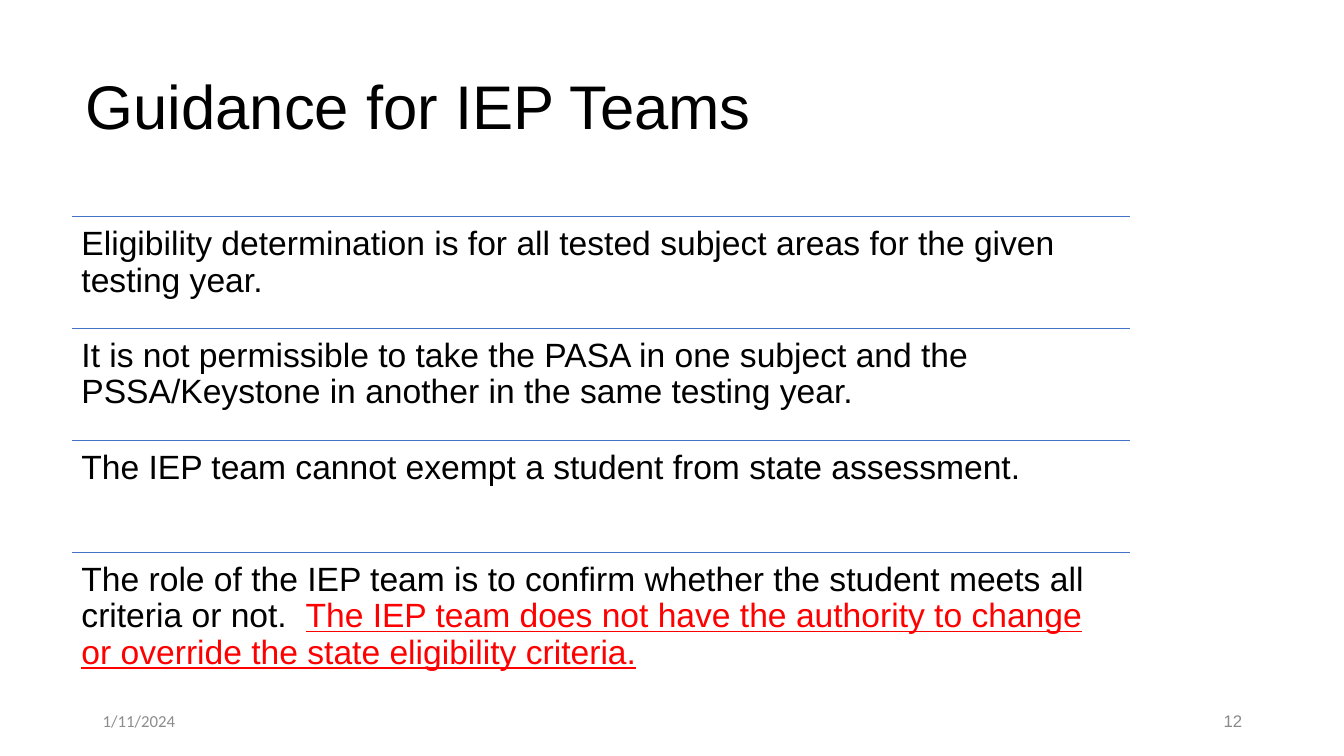
from dataclasses import dataclass

from lxml import etree
from pptx import Presentation
from pptx.dml.color import RGBColor
from pptx.enum.shapes import MSO_CONNECTOR
from pptx.enum.text import MSO_ANCHOR, PP_ALIGN
from pptx.oxml.ns import qn
from pptx.util import Inches, Pt

STRAIGHT = MSO_CONNECTOR.STRAIGHT
TOP, MIDDLE, BOTTOM = MSO_ANCHOR.TOP, MSO_ANCHOR.MIDDLE, MSO_ANCHOR.BOTTOM
LEFT, RIGHT = PP_ALIGN.LEFT, PP_ALIGN.RIGHT


@dataclass(frozen=True)
class Theme:
    """Colours, fonts and type sizes of the slide."""
    ink: str = "000000"
    alert: str = "FF0000"
    rule: str = "4472C4"
    date: str = "8C8C8C"
    page: str = "898989"
    face: str = "Arial"
    alt: str = "Calibri"
    title: int = 44
    body: int = 24
    foot: int = 12


THEME = Theme()

POINTS = [
    ("Eligibility determination is for all tested subject areas "
     "for the given testing year.", ""),
    ("It is not permissible to take the PASA in one subject and the "
     "PSSA/Keystone in another in the same testing year.", ""),
    ("The IEP team cannot exempt a student from state assessment.", ""),
    ("The role of the IEP team is to confirm whether the student meets all "
     "criteria or not.  ",
     "The IEP team does not have the authority to change or override "
     "the state eligibility criteria."),
]


def add_text(slide, box, text, size, color=THEME.ink, face=THEME.face,
             anchor=TOP, align=LEFT, inset=0.05, lead=1.0):
    """Add a one-paragraph text box and return its paragraph."""
    frame = slide.shapes.add_textbox(*map(Inches, box)).text_frame
    frame.word_wrap = True
    frame.vertical_anchor = anchor
    frame.margin_left = frame.margin_right = Inches(0.1)
    frame.margin_top = frame.margin_bottom = Inches(inset)
    para = frame.paragraphs[0]
    para.alignment = align
    para.line_spacing = lead
    para.add_run().text = text
    para.font.size = Pt(size)
    para.font.name = face
    para.font.color.rgb = RGBColor.from_string(color)
    return para


def add_rule(slide, left, top, width):
    """Add a thin horizontal rule."""
    line = slide.shapes.add_connector(
        STRAIGHT, Inches(left), Inches(top), Inches(left + width), Inches(top))
    line.line.color.rgb = RGBColor.from_string(THEME.rule)
    line.line.width = Pt(1)
    etree.SubElement(line._element.spPr, qn("a:effectLst"))


def add_point(slide, top, height, text, stress):
    """Add a ruled statement, with any stressed ending underlined."""
    left, width = 0.71, 10.5
    add_rule(slide, left, top, width)
    para = add_text(slide, (left, top, width, height), text, THEME.body,
                    inset=0.1, lead=0.9)
    if stress:
        run = para.add_run()
        run.text = stress
        run.font.underline = True
        run.font.color.rgb = RGBColor.from_string(THEME.alert)


def main():
    """Build the slide and save it."""
    deck = Presentation()
    deck.slide_width, deck.slide_height = Inches(13.33), Inches(7.5)
    slide = deck.slides.add_slide(deck.slide_layouts[6])
    add_text(slide, (0.75, -0.28, 8.33, 1.75), "Guidance for IEP Teams",
             THEME.title, anchor=BOTTOM, lead=0.9)
    start, pitch = 2.15, 1.11
    for row, (text, stress) in enumerate(POINTS):
        add_point(slide, start + row * pitch, pitch, text, stress)
    add_text(slide, (0.92, 6.95, 3, 0.4), "1/11/2024", THEME.foot,
             THEME.date, THEME.alt, MIDDLE)
    add_text(slide, (9.42, 6.95, 3, 0.4), "12", THEME.foot,
             THEME.page, anchor=MIDDLE, align=RIGHT)
    deck.save("out.pptx")


if __name__ == "__main__":
    main()
